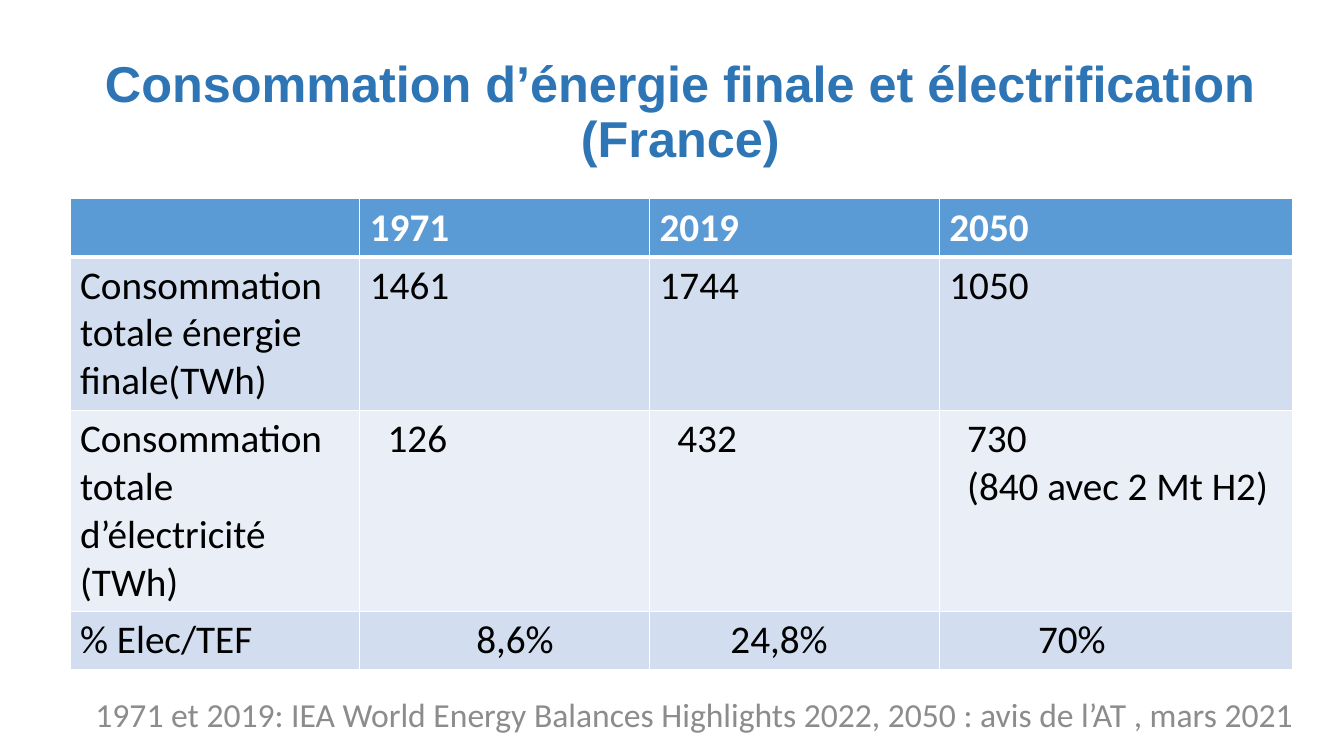
from dataclasses import dataclass

from lxml import etree
from pptx import Presentation
from pptx.dml.color import RGBColor
from pptx.enum.text import MSO_ANCHOR, PP_ALIGN
from pptx.oxml.ns import qn
from pptx.util import Pt

CENTER, LEFT = PP_ALIGN.CENTER, PP_ALIGN.LEFT
MIDDLE = MSO_ANCHOR.MIDDLE


@dataclass(frozen=True)
class Theme:
    title_font: str = "Arial"
    body_font: str = "Calibri"
    title_size: int = 36
    table_size: int = 28
    source_size: int = 24
    title: str = "2E75B6"
    header: str = "5B9BD5"
    bands: tuple = ("D2DEEF", "EAEFF7")
    white: str = "FFFFFF"
    black: str = "000000"
    source: str = "8C8C8C"


THEME = Theme()
INSET = 7.2

# Each cell holds its text and its extra left indent in points
ROWS = [
    [("", 0), ("1971", 0), ("2019", 0), ("2050", 0)],
    [("Consommation totale énergie finale(TWh)", 0),
     ("1461", 0), ("1744", 0), ("1050", 0)],
    [("Consommation totale d’électricité (TWh)", 0),
     ("126", 12.7), ("432", 12.7), ("730\n(840 avec 2 Mt H2)", 12.7)],
    [("% Elec/TEF", 0), ("8,6%", 76), ("24,8%", 50.6), ("70%", 63.3)],
]
COLUMN_WIDTHS = [207, 207, 207, 252]
ROW_HEIGHTS = [41.4, 109.6, 143.8, 41.4]


def style_text(frame, font, size, color, bold=False, align=LEFT, spacing=1.0):
    formats = {"name": font, "size": Pt(size), "bold": bold}
    for paragraph in frame.paragraphs:
        paragraph.alignment = align
        paragraph.line_spacing = spacing
        for run in paragraph.runs:
            for key, value in formats.items():
                setattr(run.font, key, value)
            run.font.color.rgb = RGBColor.from_string(color)


def add_text(slide, text, box, indent=0, **style):
    frame = slide.shapes.add_textbox(*map(Pt, box)).text_frame
    frame.word_wrap = True
    frame.vertical_anchor = MIDDLE
    frame.margin_left = Pt(INSET + indent)
    frame.text = text
    style_text(frame, **style)


def add_border(cell, side, width):
    line = etree.SubElement(cell._tc.get_or_add_tcPr(), qn(f"a:ln{side}"),
                            w=str(Pt(width)))
    fill = etree.SubElement(line, qn("a:solidFill"))
    etree.SubElement(fill, qn("a:srgbClr"), val=THEME.white)


def fill_cell(cell, text, indent, row):
    is_header = row == 0
    # The rule under the header is thicker than the others
    widths = {"L": 1, "R": 1, "T": 3 if row == 1 else 1, "B": 3 if is_header else 1}
    for side, width in widths.items():
        add_border(cell, side, width)
    background = THEME.header if is_header else THEME.bands[(row - 1) % 2]
    cell.fill.solid()
    cell.fill.fore_color.rgb = RGBColor.from_string(background)
    cell.margin_left = Pt(INSET + indent)
    cell.text = text
    style_text(cell.text_frame, THEME.body_font, THEME.table_size,
               THEME.white if is_header else THEME.black, bold=is_header)


def add_energy_table(slide, left, top):
    energy = slide.shapes.add_table(
        len(ROWS), len(COLUMN_WIDTHS), Pt(left), Pt(top),
        Pt(sum(COLUMN_WIDTHS)), Pt(sum(ROW_HEIGHTS))).table
    for column, width in zip(energy.columns, COLUMN_WIDTHS):
        column.width = Pt(width)
    for index, (row, height) in enumerate(zip(ROWS, ROW_HEIGHTS)):
        energy.rows[index].height = Pt(height)
        for position, (text, indent) in enumerate(row):
            fill_cell(energy.cell(index, position), text, indent, index)


def main():
    deck = Presentation()
    deck.slide_width, deck.slide_height = Pt(960), Pt(540)
    slide = deck.slides.add_slide(deck.slide_layouts[6])

    # Title
    add_text(slide, "Consommation d’énergie finale et électrification\v(France)",
             (66, 29, 840, 104.4), font=THEME.title_font, size=THEME.title_size,
             color=THEME.title, bold=True, align=CENTER, spacing=0.9)

    # Consumption figures
    add_energy_table(slide, 50, 142)

    # Source line
    add_text(slide, "1971 et 2019: IEA World Energy Balances Highlights 2022, "
             "2050 : avis de l’AT , mars 2021",
             (12, 491, 932, 38), indent=49, font=THEME.body_font,
             size=THEME.source_size, color=THEME.source)

    deck.save("out.pptx")


if __name__ == "__main__":
    main()
